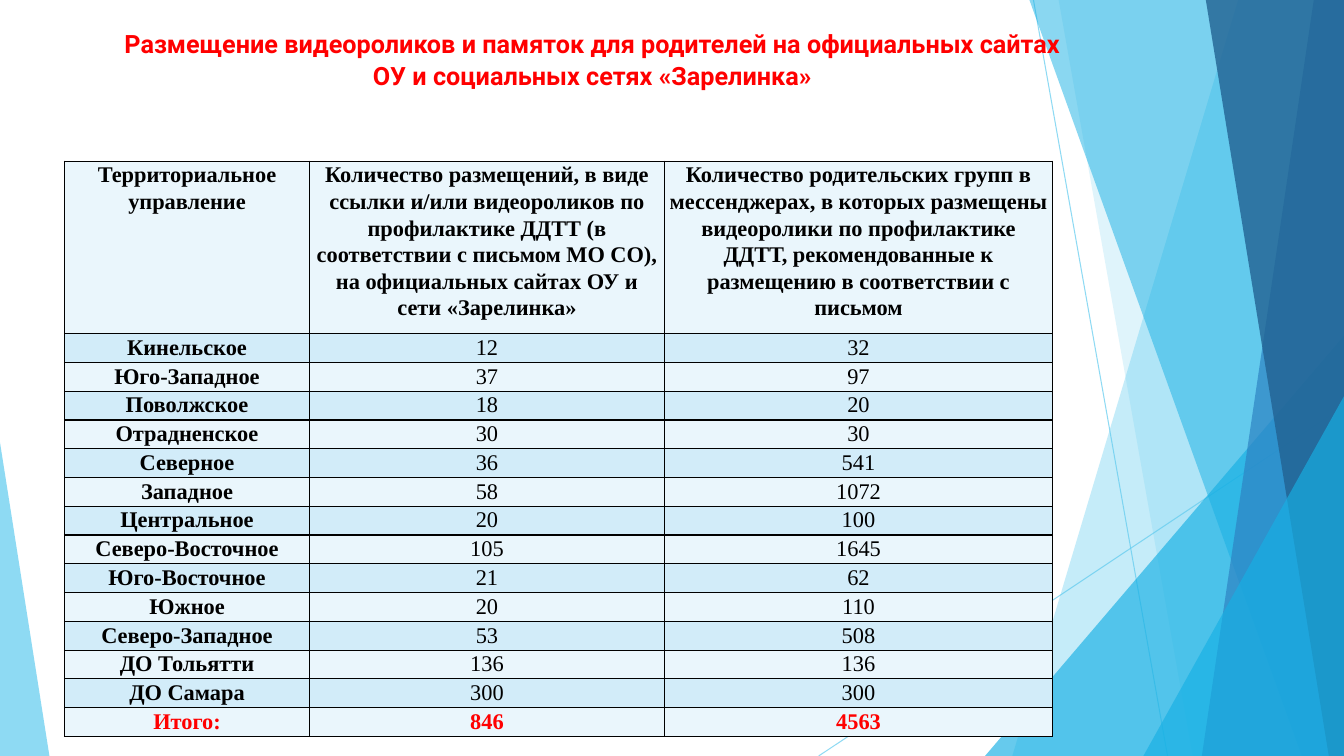
from lxml import etree
from pptx import Presentation
from pptx.dml.color import RGBColor
from pptx.enum.shapes import MSO_CONNECTOR, MSO_SHAPE
from pptx.enum.text import MSO_ANCHOR, MSO_AUTO_SIZE, PP_ALIGN
from pptx.oxml.ns import qn
from pptx.util import Inches, Pt

STRAIGHT = MSO_CONNECTOR.STRAIGHT
TRIANGLE = MSO_SHAPE.ISOSCELES_TRIANGLE
TOP = MSO_ANCHOR.TOP
CENTER = PP_ALIGN.CENTER
NO_AUTOFIT = MSO_AUTO_SIZE.NONE

THEME = {
    "sky": "5FCBEF", "cyan": "17B0E4", "blue": "2E83C3", "navy": "226292",
    "accent": "FF0000", "ink": "000000", "light_row": "EAF6FC", "dark_row": "D2ECF9",
    "title_font": "Roboto", "table_font": "Times New Roman",
    "title_size": 18, "table_size": 16,
}


def write(frame, text, font, size, color="ink", bold=False, after=0):
    frame.text = text
    paragraph = frame.paragraphs[0]
    paragraph.alignment = CENTER
    paragraph.line_spacing = 1.07
    paragraph.space_before = Pt(0)
    paragraph.space_after = Pt(after)
    run_font = paragraph.runs[0].font
    run_font.name = THEME[font]
    run_font.size = Pt(THEME[size])
    run_font.bold = bold
    run_font.color.rgb = RGBColor.from_string(THEME[color])


def paint(shape, color, opacity):
    shape.shadow.inherit = False
    shape.fill.solid()
    shape.fill.fore_color.rgb = RGBColor.from_string(THEME[color])
    shape.line.fill.background()
    tint = shape.element.spPr.find(".//" + qn("a:srgbClr"))
    etree.SubElement(tint, qn("a:alpha"), val=str(opacity * 1000))


prs = Presentation()
prs.slide_width = Inches(13.33)
prs.slide_height = Inches(7.5)
slide = prs.slides.add_slide(prs.slide_layouts[5])
shapes = slide.shapes

for x1, y1, x2, y2 in [(10.25, 0, 11.58, 7.5), (13.33, 4.03, 8.12, 7.5)]:
    ray = shapes.add_connector(STRAIGHT, Inches(x1), Inches(y1), Inches(x2), Inches(y2))
    ray.line.width = Pt(0.75)
    ray.line.color.rgb = RGBColor.from_string(THEME["sky"])
    ray_tint = ray.element.spPr.find(".//" + qn("a:srgbClr"))
    etree.SubElement(ray_tint, qn("a:alpha"), val="70000")
    etree.SubElement(ray.element.spPr, qn("a:effectLst"))

BAND, WEDGE = "band", "wedge"
facets = [
    (BAND, (12.28, 10.04), "sky", 36),
    (BAND, (10.5, 11.83), "sky", 20),
    (WEDGE, (9.77, 3.33, 3.56, 4.17, 1), "cyan", 66),
    (BAND, (10.21, 12.91), "cyan", 50),
    (BAND, (13.03, 11.92), "blue", 70),
    (BAND, (11.96, 13.18), "navy", 80),
    (WEDGE, (11.34, 3.93, 1.99, 3.57, 1), "cyan", 66),
    (WEDGE, (0, 4.39, 0.49, 3.11, 0), "sky", 70),
]
for kind, geometry, color, opacity in facets:
    if kind == BAND:
        top_x, bottom_x = geometry
        outline = shapes.build_freeform(Inches(top_x), 0)
        corners = [(13.33, 0), (13.33, 7.5), (bottom_x, 7.5)]
        outline.add_line_segments([(Inches(x), Inches(y)) for x, y in corners], close=True)
        facet = outline.convert_to_shape()
    else:
        *box, apex = geometry
        facet = shapes.add_shape(TRIANGLE, *[Inches(length) for length in box])
        facet.adjustments[0] = apex
    paint(facet, color, opacity)

title = shapes.title
title.left, title.top = Inches(1.01), Inches(0.21)
title.width, title.height = Inches(9.73), Inches(1.06)
title.text_frame.word_wrap = True
title.text_frame.auto_size = NO_AUTOFIT
title.text_frame.vertical_anchor = TOP
write(title.text_frame,
      "Размещение видеороликов и памяток для родителей на официальных "
      "сайтах ОУ и социальных сетях «Зарелинка»",
      font="title_font", size="title_size", color="accent", bold=True)
shapes.element.append(title.element)

rows = [
    ("Территориальное управление",
     "Количество размещений, в виде ссылки и/или видеороликов по профилактике ДДТТ "
     "(в соответствии с письмом МО СО), на официальных сайтах ОУ и сети «Зарелинка»",
     "Количество родительских групп в мессенджерах, в которых размещены видеоролики "
     "по профилактике ДДТТ, рекомендованные к размещению в соответствии с письмом"),
    ("Кинельское", "12", "32"),
    ("Юго-Западное", "37", "97"),
    ("Поволжское", "18", "20"),
    ("Отрадненское", "30", "30"),
    ("Северное", "36", "541"),
    ("Западное", "58", "1072"),
    ("Центральное", "20", "100"),
    ("Северо-Восточное", "105", "1645"),
    ("Юго-Восточное", "21", "62"),
    ("Южное", "20", "110"),
    ("Северо-Западное", "53", "508"),
    ("ДО Тольятти", "136", "136"),
    ("ДО Самара", "300", "300"),
    ("Итого:", "846", "4563"),
]
HEADER_HEIGHT, BODY_HEIGHT = 1.71, 4
total_row = len(rows) - 1
placements = shapes.add_table(len(rows), 3, Inches(0.64), Inches(1.6), Inches(9.8),
                              Inches(HEADER_HEIGHT + BODY_HEIGHT)).table
placements.first_row = False
placements.horz_banding = False
for column, width in zip(placements.columns, (2.43, 3.52, 3.85)):
    column.width = Inches(width)

for r, row in enumerate(rows):
    placements.rows[r].height = Inches(BODY_HEIGHT / total_row if r else HEADER_HEIGHT)
    for c, text in enumerate(row):
        cell = placements.cell(r, c)
        cell.margin_left = cell.margin_right = Inches(0.05)
        cell.margin_top = cell.margin_bottom = 0
        write(cell.text_frame, text, font="table_font", size="table_size",
              color="accent" if r == total_row else "ink",
              bold=c == 0 or r in (0, total_row), after=8)
        borders = cell.fill and cell._tc.get_or_add_tcPr()
        for side in ("a:lnL", "a:lnR", "a:lnT", "a:lnB"):
            border = etree.SubElement(borders, qn(side), w=str(Pt(1)))
            stroke = etree.SubElement(border, qn("a:solidFill"))
            etree.SubElement(stroke, qn("a:srgbClr"), val=THEME["ink"])
        cell.fill.solid()
        cell.fill.fore_color.rgb = RGBColor.from_string(THEME["dark_row" if r % 2 else "light_row"])

prs.save("out.pptx")
